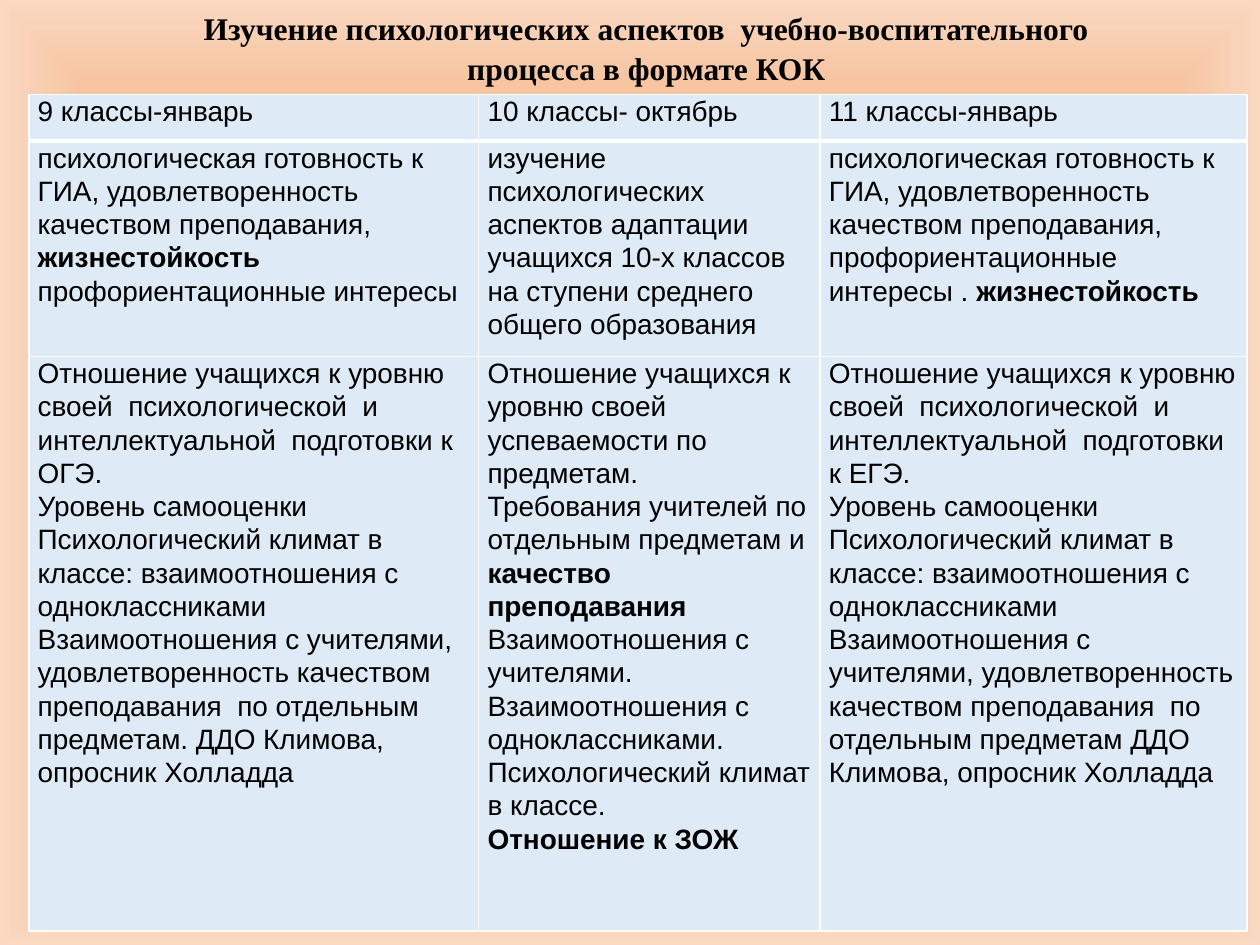
import pptx
import pptx.util
import pptx.dml.color
import pptx.enum.text
import pptx.oxml
import pptx.oxml.ns
from pptx.util import Cm

HUES = {"text": "000000", "cell": "DEEBF7", "rule": "FFFFFF",
        "pale": "FEF8F5", "peach": "F7C5A2", "edge": "FAD8C1"}
STOPS = [(0, "pale"), (74, "peach"), (83, "peach"), (100, "edge")]
COLS = [9.07, 6.88, 8.61]
ROWS = [0.94, 4.32, 11.58]

TITLE = "Изучение психологических аспектов  учебно-воспитательного процесса в формате КОК"
LEVEL = "Отношение учащихся к уровню своей  "
MIND = LEVEL + "психологической  и интеллектуальной  подготовки к "
READY = "психологическая готовность к ГИА, удовлетворенность качеством преподавания,"
SELF = ["Уровень самооценки",
        "Психологический климат в классе: взаимоотношения с одноклассниками"]
STAFF = ("Взаимоотношения с учителями, удовлетворенность качеством "
         "преподавания  по отдельным предметам")
TESTS = " ДДО Климова, опросник Холладда"

# Each cell is a list of paragraphs; asterisks enclose bold words
CELLS = [
    [["9 классы-январь"], ["10 классы- октябрь"], ["11 классы-январь"]],
    [[READY, "*жизнестойкость *профориентационные интересы"],
     ["изучение психологических аспектов адаптации",
      "учащихся 10-х классов на ступени среднего общего образования"],
     [READY + " профориентационные интересы .* жизнестойкость*"]],
    [[MIND + "ОГЭ.", *SELF, STAFF + "." + TESTS],
     [LEVEL + "успеваемости по предметам.",
      "Требования учителей по отдельным предметам и *качество преподавания*",
      "Взаимоотношения с учителями.",
      "Взаимоотношения с одноклассниками.",
      "Психологический климат в классе.",
      "*Отношение к ЗОЖ*"],
     [MIND + "ЕГЭ.", *SELF, STAFF + TESTS]],
]


def style(run, size, face, bold):
    font = run.font
    font.size = pptx.util.Pt(size)
    font.name = face
    font.bold = bold
    font.color.rgb = pptx.dml.color.RGBColor.from_string(HUES["text"])


def paint_back(slide):
    slide.background.fill.gradient()
    old = slide.element.find(".//" + pptx.oxml.ns.qn("a:gradFill"))
    stops = "".join(f'<a:gs pos="{pos * 1000}"><a:srgbClr val="{HUES[hue]}"/></a:gs>'
                    for pos, hue in STOPS)
    new = pptx.oxml.parse_xml(
        f'<a:gradFill {pptx.oxml.ns.nsdecls("a")} rotWithShape="1">'
        f'<a:gsLst>{stops}</a:gsLst><a:path path="shape">'
        '<a:fillToRect l="50000" t="50000" r="50000" b="50000"/></a:path></a:gradFill>')
    old.getparent().replace(old, new)


def add_title(slide, left, top, width, height):
    title = slide.shapes.title
    title.left, title.top, title.width, title.height = map(Cm, (left, top, width, height))
    frame = title.text_frame
    frame.text = TITLE
    frame.word_wrap = True
    frame.auto_size = pptx.enum.text.MSO_AUTO_SIZE.SHAPE_TO_FIT_TEXT
    frame.vertical_anchor = pptx.enum.text.MSO_ANCHOR.TOP
    para = frame.paragraphs[0]
    para.alignment = pptx.enum.text.PP_ALIGN.CENTER
    para.line_spacing = 1.07
    style(para.runs[0], 18, "Times New Roman", True)


def rule_cell(cell, row):
    # The rule under the header row is thicker
    wide = {"T": 3 if row == 1 else 1, "B": 3 if row == 0 else 1}
    props = cell._tc.get_or_add_tcPr()
    for side in "LRTB":
        props.append(pptx.oxml.parse_xml(
            f'<a:ln{side} {pptx.oxml.ns.nsdecls("a")} w="{wide.get(side, 1) * 12700}">'
            f'<a:solidFill><a:srgbClr val="{HUES["rule"]}"/></a:solidFill></a:ln{side}>'))


def fill_cell(cell, lines):
    cell.fill.solid()
    cell.fill.fore_color.rgb = pptx.dml.color.RGBColor.from_string(HUES["cell"])
    cell.margin_left = cell.margin_right = Cm(0.18)
    cell.margin_top = cell.margin_bottom = 0
    frame = cell.text_frame
    frame.text = "\n".join(line.replace("*", "") for line in lines)
    for para, line in zip(frame.paragraphs, lines):
        para.line_spacing = 1.07
        para.clear()
        for num, part in enumerate(line.split("*")):
            if part:
                run = para.add_run()
                run.text = part
                style(run, 16, "Arial", num % 2 == 1)


def add_grid(slide, left, top):
    grid = slide.shapes.add_table(len(ROWS), len(COLS), Cm(left), Cm(top),
                                  Cm(sum(COLS)), Cm(sum(ROWS))).table
    for col, width in zip(grid.columns, COLS):
        col.width = Cm(width)
    for row, height in enumerate(ROWS):
        grid.rows[row].height = Cm(height)
        for col, lines in enumerate(CELLS[row]):
            cell = grid.cell(row, col)
            rule_cell(cell, row)
            fill_cell(cell, lines)


def main():
    deck = pptx.Presentation()
    deck.slide_width, deck.slide_height = Cm(25.4), Cm(19.05)
    slide = deck.slides.add_slide(deck.slide_layouts[5])
    paint_back(slide)
    add_title(slide, 2.49, 0, 21.08, 1.9)
    add_grid(slide, 0.58, 1.9)
    deck.save("out.pptx")


if __name__ == "__main__":
    main()
